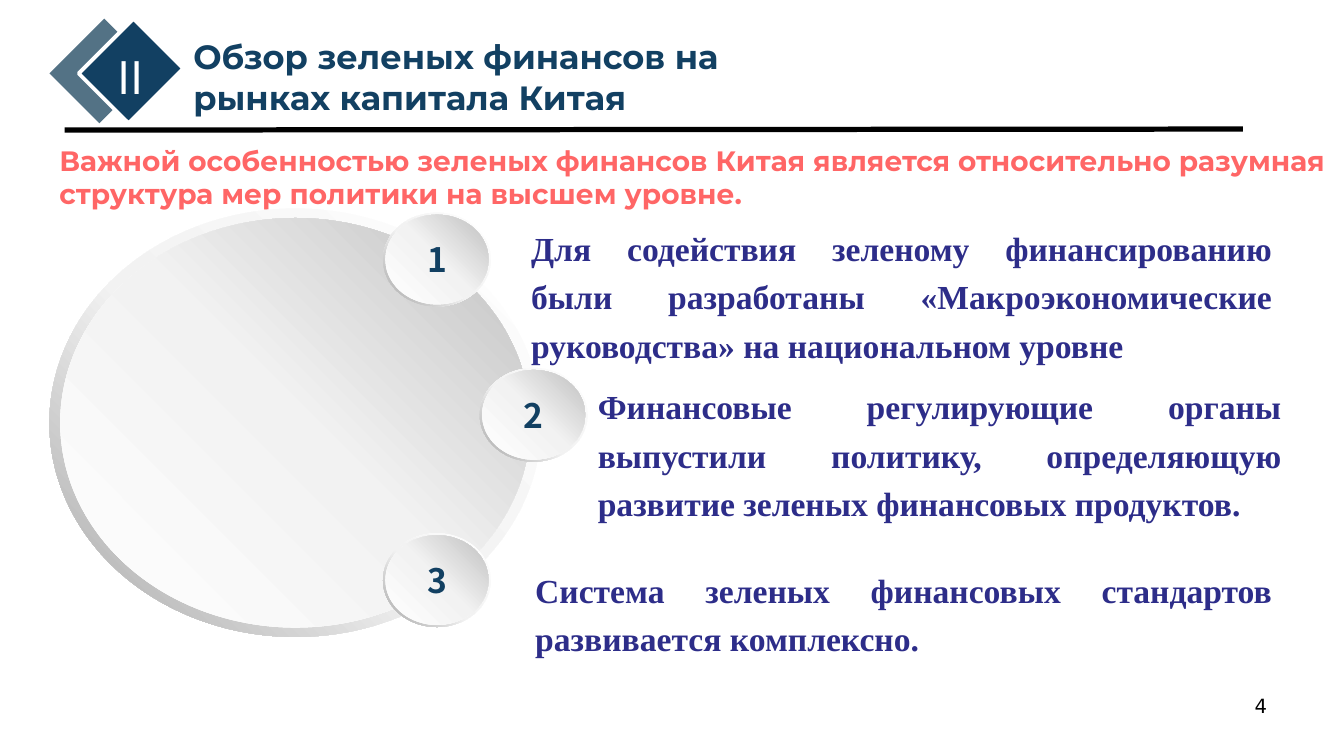
from copy import deepcopy
from dataclasses import dataclass

from lxml import etree
from pptx import Presentation
from pptx.dml.color import RGBColor
from pptx.enum.shapes import MSO_CONNECTOR, MSO_SHAPE
from pptx.enum.text import MSO_ANCHOR, MSO_AUTO_SIZE, PP_ALIGN
from pptx.oxml.ns import qn
from pptx.shapes.autoshape import Shape
from pptx.slide import Slide
from pptx.text.text import TextFrame
from pptx.util import Pt

DIAMOND = MSO_SHAPE.ROUNDED_RECTANGLE
RING = MSO_SHAPE.DONUT
FACE = MSO_SHAPE.OVAL
STRAIGHT = MSO_CONNECTOR.STRAIGHT
TOP, MIDDLE = MSO_ANCHOR.TOP, MSO_ANCHOR.MIDDLE
GROW, FIXED = MSO_AUTO_SIZE.SHAPE_TO_FIT_TEXT, MSO_AUTO_SIZE.NONE
LEFT, CENTER, RIGHT, JUSTIFY = PP_ALIGN.LEFT, PP_ALIGN.CENTER, PP_ALIGN.RIGHT, PP_ALIGN.JUSTIFY

BLACK = RGBColor(0x00, 0x00, 0x00)
WHITE = RGBColor(0xFF, 0xFF, 0xFF)
NAVY = RGBColor(0x12, 0x40, 0x62)
SLATE = RGBColor(0x53, 0x72, 0x85)
CORAL = RGBColor(0xFF, 0x66, 0x66)
INDIGO = RGBColor(0x2D, 0x2D, 0x89)
PALE = RGBColor(0xF2, 0xF2, 0xF2)
SILVER = RGBColor(0xBF, 0xBF, 0xBF)
GRAY = RGBColor(0xA6, 0xA6, 0xA6)

RING_WIDTH = 0.049
FACE_INSET = 0.022  # share of the ring's width and height


@dataclass(frozen=True)
class Area:
    left: float
    top: float
    width: float
    height: float

    def inset(self, share: float) -> "Area":
        dx, dy = self.width * share, self.height * share
        return Area(self.left + dx, self.top + dy, self.width - 2 * dx, self.height - 2 * dy)

    def lengths(self) -> tuple[Pt, Pt, Pt, Pt]:
        return Pt(self.left), Pt(self.top), Pt(self.width), Pt(self.height)


@dataclass(frozen=True)
class Style:
    font: str
    size: float
    color: RGBColor
    bold: bool = True
    align: PP_ALIGN = LEFT
    line_spacing: float = 1.0


@dataclass(frozen=True)
class Gradient:
    end: RGBColor
    middle_position: float
    angle: float  # counter-clockwise


@dataclass(frozen=True)
class Point:
    number: str
    ring_left: float
    ring_top: float
    text_area: Area
    text: str


TITLE = Style("Montserrat", 24, NAVY)
NUMERAL = Style("Noto Sans CJK SC", 32, WHITE, bold=False)
PAGE_NUMBER = Style("DejaVu Sans", 14, BLACK, bold=False, align=RIGHT)
LEAD = Style("Montserrat", 20, CORAL)
BADGE = Style("Noto Sans CJK SC", 24, NAVY, align=CENTER)
BODY = Style("Times New Roman", 24, INDIGO, align=JUSTIFY, line_spacing=1.2)

RING_GRADIENT = Gradient(GRAY, 0.55, 225)
FACE_GRADIENT = Gradient(SILVER, 0.51, 45)

POINTS = [
    Point("1", 273.6, 151.9, Area(379.4, 157, 529.2, 72),
          "Для содействия зеленому финансированию были разработаны "
          "«Макроэкономические руководства» на национальном уровне"),
    Point("2", 342.7, 262.8, Area(427, 270, 488.2, 109.4),
          "Финансовые регулирующие органы выпустили политику, определяющую "
          "развитие зеленых финансовых продуктов."),
    Point("3", 273.6, 380.9, Area(382.3, 401, 526.3, 72),
          "Система зеленых финансовых стандартов развивается комплексно."),
]


def write(frame: TextFrame, text: str, style: Style) -> None:
    para = frame.paragraphs[0]
    para.text = text
    para.alignment = style.align
    para.line_spacing = style.line_spacing
    font = para.font
    font.name, font.size, font.bold = style.font, Pt(style.size), style.bold
    font.color.rgb = style.color


def add_text(page: Slide, area: Area, text: str, style: Style, anchor: MSO_ANCHOR = TOP,
             fit: MSO_AUTO_SIZE = GROW, wrap: bool = True, margins: bool = True) -> None:
    frame = page.shapes.add_textbox(*area.lengths()).text_frame
    frame.word_wrap = wrap
    frame.auto_size = fit
    frame.vertical_anchor = anchor
    if not margins:
        frame.margin_left = frame.margin_top = frame.margin_right = frame.margin_bottom = 0
    write(frame, text, style)


def add_plain_shape(page: Slide, kind: MSO_SHAPE, area: Area) -> Shape:
    shape = page.shapes.add_shape(kind, *area.lengths())
    shape.shadow.inherit = False
    shape.line.fill.background()
    return shape


def add_diamond(page: Slide, left: float, color: RGBColor) -> Shape:
    shape = add_plain_shape(page, DIAMOND, Area(left, 23, 50.4, 55.4))
    shape.adjustments[0] = 0
    shape.rotation = 45
    shape.fill.solid()
    shape.fill.fore_color.rgb = color
    return shape


def fill_gradient(shape: Shape, gradient: Gradient) -> None:
    shape.fill.gradient()
    shape.fill.gradient_angle = gradient.angle
    stop_list = shape.element.spPr.find(".//" + qn("a:gsLst"))
    stop_list.insert(1, deepcopy(stop_list[0]))
    colors = (WHITE, PALE, gradient.end)
    positions = (0, gradient.middle_position, 1)
    for stop, color, position in zip(shape.fill.gradient_stops, colors, positions):
        stop.color.rgb = color
        stop.position = position


def add_disc(page: Slide, area: Area) -> Shape:
    ring = add_plain_shape(page, RING, area)
    ring.adjustments[0] = RING_WIDTH
    fill_gradient(ring, RING_GRADIENT)
    face = add_plain_shape(page, FACE, area.inset(FACE_INSET))
    fill_gradient(face, FACE_GRADIENT)
    return face


def main() -> None:
    deck = Presentation()
    deck.slide_width, deck.slide_height = Pt(960), Pt(540)
    page = deck.slides.add_slide(deck.slide_layouts[6])

    # Heading with its diamonds and rule
    add_diamond(page, 47.5, SLATE)
    front = add_diamond(page, 68.4, NAVY)
    front.line.color.rgb = WHITE
    front.line.width = Pt(2.75)
    add_text(page, Area(131, 22.3, 492.5, 65.5),
             "Обзор зеленых финансов на рынках капитала Китая", TITLE)
    add_text(page, Area(77, 31.7, 33.1, 46), "II", NUMERAL, wrap=False)
    rule = page.shapes.add_connector(STRAIGHT, Pt(46.1), Pt(92.9), Pt(887.8), Pt(92.2))
    rule.line.color.rgb = BLACK
    rule.line.width = Pt(3.75)
    etree.SubElement(rule.element.spPr, qn("a:effectLst"))

    # Page number and lead sentence
    add_text(page, Area(688.3, 491.8, 223.9, 37.4), "4", PAGE_NUMBER, fit=FIXED)
    add_text(page, Area(35.3, 91.4, 918.7, 69.8),
             "Важной особенностью зеленых финансов Китая является относительно разумная "
             "структура мер политики на высшем уровне.", LEAD, anchor=MIDDLE, fit=FIXED)

    # Large disc with numbered points
    add_disc(page, Area(35.3, 149, 351.4, 306))
    for point in POINTS:
        badge = add_disc(page, Area(point.ring_left, point.ring_top, 77, 67))
        badge.text_frame.vertical_anchor = MIDDLE
        write(badge.text_frame, point.number, BADGE)
        add_text(page, point.text_area, point.text, BODY, margins=False)

    deck.save("out.pptx")


if __name__ == "__main__":
    main()
